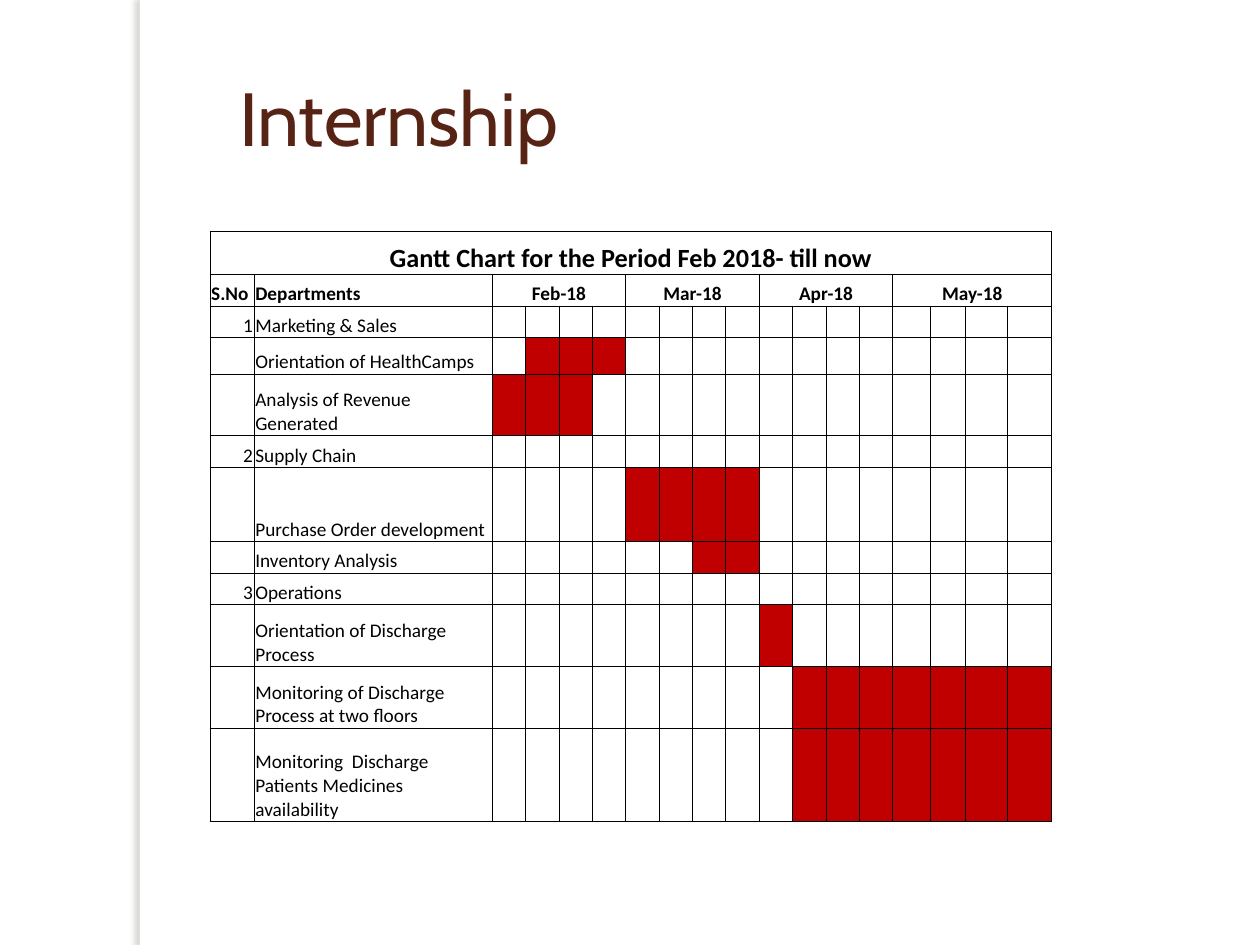
from dataclasses import dataclass
from typing import Optional

import pptx
import pptx.dml.color
import pptx.enum.shapes
import pptx.enum.text
import pptx.oxml
import pptx.oxml.ns
import pptx.util
from pptx.util import Inches, Pt

ALIGN = pptx.enum.text.PP_ALIGN
ANCHOR = pptx.enum.text.MSO_ANCHOR


@dataclass(frozen=True)
class Theme:
    title_font: str = "Cabin"
    table_font: str = "Calibri"
    title_size: int = 43
    heading_size: int = 15
    body_size: int = 11
    border_width: float = 0.5
    white: str = "FFFFFF"
    title: str = "572314"
    ink: str = "000000"
    bar: str = "C00000"
    shadow: str = "736F63"


@dataclass(frozen=True)
class Task:
    """A table row; its bar covers the weeks from start to end, counted from 1."""
    name: str
    height: float
    number: str = ""
    start: int = 0
    end: int = -1


THEME = Theme()
SLIDE_WIDTH, SLIDE_HEIGHT = Inches(10), Inches(7.5)
MONTHS = ("Feb-18", "Mar-18", "Apr-18", "May-18")
WEEKS_PER_MONTH = 4
FIRST_WEEK_COLUMN = 2
MONTH_WIDTH = 1.06
COLUMN_WIDTHS = [0.35, 1.89] + [MONTH_WIDTH / WEEKS_PER_MONTH] * 12 + [0.3, 0.28, 0.33, 0.35]
HEADER_HEIGHTS = [0.34, 0.25]
TASKS = (
    Task("Marketing & Sales", 0.25, number="1"),
    Task("Orientation of HealthCamps", 0.29, start=2, end=4),
    Task("Analysis of Revenue Generated", 0.49, start=1, end=3),
    Task("Supply Chain", 0.25, number="2"),
    Task("Purchase Order development", 0.59, start=5, end=8),
    Task("Inventory Analysis", 0.25, start=7, end=8),
    Task("Operations", 0.25, number="3"),
    Task("Orientation of Discharge Process", 0.49, start=9, end=9),
    Task("Monitoring of Discharge Process at two floors", 0.49, start=10, end=16),
    Task("Monitoring  Discharge Patients Medicines availability", 0.74, start=10, end=16),
)


def rgb(value: str) -> pptx.dml.color.RGBColor:
    return pptx.dml.color.RGBColor.from_string(value)


def set_attributes(target, values: dict) -> None:
    for name, value in values.items():
        setattr(target, name, value)


def write(paragraph, text: str, font: str, size: int, color: str, bold: bool = False) -> None:
    run = paragraph.add_run()
    run.text = text
    set_attributes(run.font, {"name": font, "size": Pt(size), "bold": bold})
    run.font.color.rgb = rgb(color)


def add_side_edge(slide) -> None:
    """Draw the white vertical strip that casts a soft shadow to the left."""
    strip = slide.shapes.add_shape(
        pptx.enum.shapes.MSO_SHAPE.RECTANGLE,
        int(SLIDE_WIDTH * 0.111), 0, int(SLIDE_WIDTH * 0.008), SLIDE_HEIGHT)
    strip.fill.solid()
    strip.fill.fore_color.rgb = rgb(THEME.white)
    strip.line.fill.background()
    strip.shadow.inherit = False
    effects = strip._element.spPr.find(pptx.oxml.ns.qn("a:effectLst"))
    effects.append(pptx.oxml.parse_xml(
        f'<a:outerShdw {pptx.oxml.ns.nsdecls("a")} blurRad="{Pt(3)}" dist="{Pt(3)}" '
        f'dir="10800000" algn="tl" rotWithShape="0"><a:srgbClr val="{THEME.shadow}">'
        '<a:alpha val="25000"/></a:srgbClr></a:outerShdw>'))


def add_title(slide, text: str) -> None:
    box = slide.shapes.add_textbox(
        int(SLIDE_WIDTH * 0.18), int(SLIDE_HEIGHT * 0.04),
        int(SLIDE_WIDTH * 0.82), Inches(1.25))
    set_attributes(box.text_frame, {"word_wrap": True, "vertical_anchor": ANCHOR.MIDDLE})
    write(box.text_frame.paragraphs[0], text, THEME.title_font, THEME.title_size, THEME.title)


def format_cell(cell, fill: Optional[str] = None) -> None:
    """Set borders, margins and fill, and keep the empty line of the cell small."""
    set_attributes(cell, {
        "vertical_anchor": ANCHOR.BOTTOM, "margin_left": Inches(0.01),
        "margin_right": Inches(0.01), "margin_top": Inches(0.01), "margin_bottom": 0})
    properties = cell._tc.get_or_add_tcPr()
    namespace = pptx.oxml.ns.nsdecls("a")
    for side in ("lnL", "lnR", "lnT", "lnB"):
        properties.append(pptx.oxml.parse_xml(
            f'<a:{side} {namespace} w="{Pt(THEME.border_width)}"><a:solidFill>'
            f'<a:srgbClr val="{THEME.ink}"/></a:solidFill></a:{side}>'))
    if fill:
        cell.fill.solid()
        cell.fill.fore_color.rgb = rgb(fill)
    else:
        cell.fill.background()
    cell.text_frame.paragraphs[0]._p.append(pptx.oxml.parse_xml(
        f'<a:endParaRPr {namespace} sz="{THEME.body_size * 100}"/>'))


def fill_text(cell, text: str, alignment=ALIGN.LEFT, size: int = THEME.body_size,
              bold: bool = False) -> None:
    paragraph = cell.text_frame.paragraphs[0]
    paragraph.alignment = alignment
    write(paragraph, text, THEME.table_font, size, THEME.ink, bold)


def add_gantt_table(slide) -> None:
    heights = HEADER_HEIGHTS + [task.height for task in TASKS]
    table = slide.shapes.add_table(
        len(heights), len(COLUMN_WIDTHS), int(SLIDE_WIDTH / 6), Inches(1.84),
        Inches(sum(COLUMN_WIDTHS)), Inches(sum(heights))).table
    set_attributes(table, {"first_row": False, "horz_banding": False})
    for column, width in zip(table.columns, COLUMN_WIDTHS):
        column.width = Inches(width)
    for row, height in zip(table.rows, heights):
        row.height = Inches(height)

    for row_index in range(len(heights)):
        task = TASKS[row_index - len(HEADER_HEIGHTS)] if row_index >= len(HEADER_HEIGHTS) else None
        for column_index in range(len(COLUMN_WIDTHS)):
            week = column_index - FIRST_WEEK_COLUMN + 1
            busy = task is not None and task.start <= week <= task.end
            format_cell(table.cell(row_index, column_index), THEME.bar if busy else None)
        if task:
            fill_text(table.cell(row_index, 1), task.name)
            if task.number:
                fill_text(table.cell(row_index, 0), task.number, ALIGN.RIGHT)

    heading = table.cell(0, 0)
    heading.merge(table.cell(0, len(COLUMN_WIDTHS) - 1))
    fill_text(heading, "Gantt Chart for the Period Feb 2018- till now",
              ALIGN.CENTER, THEME.heading_size, bold=True)
    for column_index, label in enumerate(("S.No", "Departments")):
        fill_text(table.cell(1, column_index), label, bold=True)
    for month_index, month in enumerate(MONTHS):
        first = FIRST_WEEK_COLUMN + month_index * WEEKS_PER_MONTH
        month_cell = table.cell(1, first)
        month_cell.merge(table.cell(1, first + WEEKS_PER_MONTH - 1))
        fill_text(month_cell, month, ALIGN.CENTER, bold=True)


def main() -> None:
    presentation = pptx.Presentation()
    set_attributes(presentation, {"slide_width": SLIDE_WIDTH, "slide_height": SLIDE_HEIGHT})
    slide = presentation.slides.add_slide(presentation.slide_layouts[6])
    slide.background.fill.solid()
    slide.background.fill.fore_color.rgb = rgb(THEME.white)
    add_side_edge(slide)
    add_title(slide, "Internship")
    add_gantt_table(slide)
    presentation.save("out.pptx")


if __name__ == "__main__":
    main()
